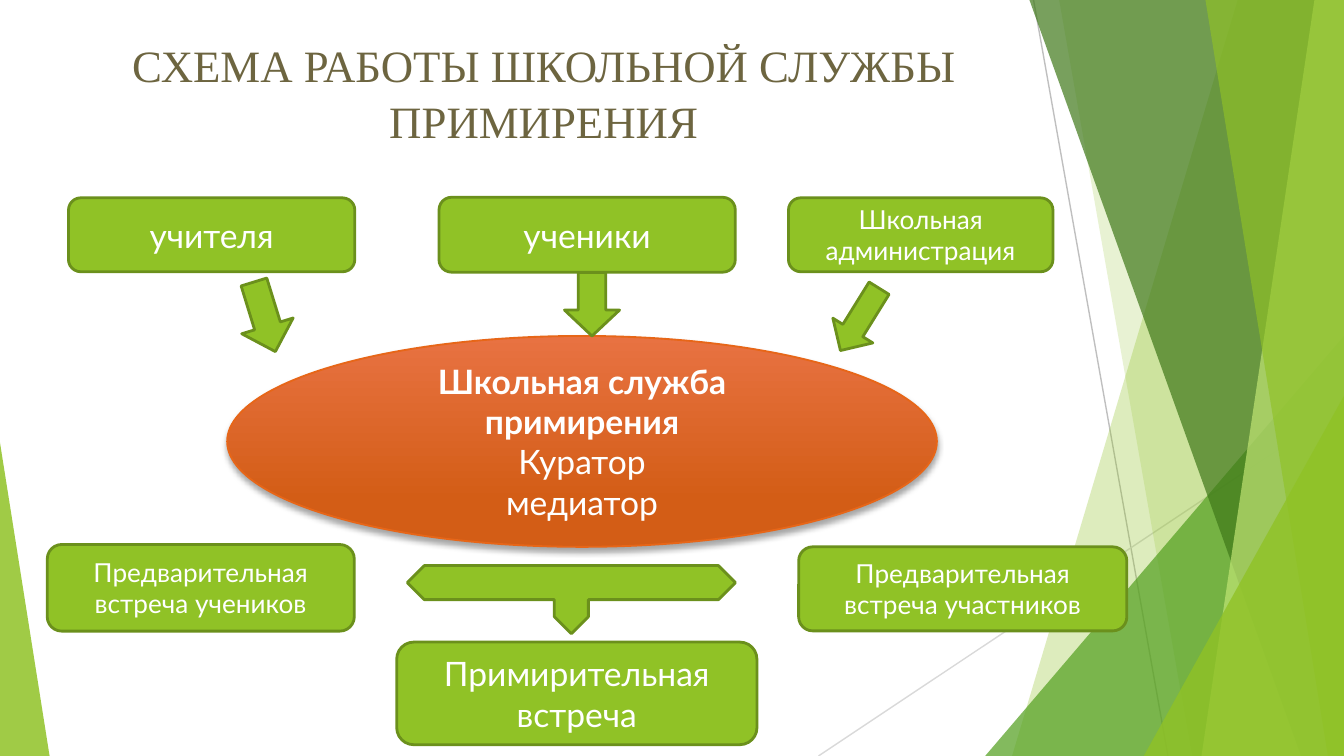
from lxml.etree import SubElement
from pptx import Presentation
from pptx.dml.color import RGBColor
from pptx.enum.shapes import MSO_CONNECTOR, MSO_SHAPE
from pptx.enum.text import MSO_ANCHOR, PP_ALIGN
from pptx.oxml.ns import qn
from pptx.util import Pt

WIDE, HIGH = 720, 405
HUES = {
    "white": "FFFFFF", "title": "6D6540", "green": "90C226", "edge": "6B901C",
    "leaf": "54A021", "dark": "3F7819", "light": "C0E474",
    "gray": "BFBFBF", "pale": "D9D9D9",
    "top": "E87242", "base": "D35D16", "rim": "E76618", "black": "000000",
}


def hue(name):
    return RGBColor.from_string(HUES[name])


def tint(shape, name, alpha):
    shape.shadow.inherit = False
    shape.fill.solid()
    shape.fill.fore_color.rgb = hue(name)
    shape.line.fill.background()
    color = shape.fill._xPr.find(qn("a:solidFill"))[0]
    SubElement(color, qn("a:alpha"), val=str(alpha * 1000))


def add_line(slide, ends, name):
    line = slide.shapes.add_connector(MSO_CONNECTOR.STRAIGHT, *map(Pt, ends))
    line.line.color.rgb = hue(name)
    line.line.width = Pt(0.75)
    SubElement(line._element.spPr, qn("a:effectLst"))


def add_band(slide, top, foot, name, alpha):
    form = slide.shapes.build_freeform(Pt(top), 0)
    corners = [(WIDE, 0), (WIDE, HIGH), (foot, HIGH)]
    form.add_line_segments([(Pt(x), Pt(y)) for x, y in corners], close=True)
    tint(form.convert_to_shape(), name, alpha)


def add_wedge(slide, box, tip, name, alpha):
    shape = slide.shapes.add_shape(MSO_SHAPE.ISOSCELES_TRIANGLE, *map(Pt, box))
    shape.adjustments[0] = tip
    tint(shape, name, alpha)


def write(shape, text, size, font="Lato", color="white"):
    frame = shape.text_frame
    frame.word_wrap = True
    frame.vertical_anchor = MSO_ANCHOR.MIDDLE
    frame.text = text
    for para in frame.paragraphs:
        para.alignment = PP_ALIGN.CENTER
        for run in para.runs:
            run.font.size = Pt(size)
            run.font.name = font
            run.font.color.rgb = hue(color)


def add_green(slide, kind, box, turn=0, adjust=()):
    shape = slide.shapes.add_shape(kind, *map(Pt, box))
    shape.shadow.inherit = False
    shape.fill.solid()
    shape.fill.fore_color.rgb = hue("green")
    shape.line.color.rgb = hue("edge")
    shape.line.width = Pt(1.5)
    shape.rotation = turn
    for spot, value in enumerate(adjust):
        shape.adjustments[spot] = value
    return shape


def add_title(slide):
    box = slide.shapes.add_textbox(*map(Pt, (1.4, 15, 579.6, 79.2)))
    write(box, "СХЕМА РАБОТЫ ШКОЛЬНОЙ СЛУЖБЫ ПРИМИРЕНИЯ", 24,
          "Times New Roman", "title")
    box.text_frame.vertical_anchor = MSO_ANCHOR.TOP
    box.text_frame.paragraphs[0].line_spacing = 1.05


def add_core(slide):
    core = slide.shapes.add_shape(MSO_SHAPE.OVAL, *map(Pt, (121.7, 180, 380.2, 113)))
    core.fill.gradient()
    core.fill.gradient_angle = 270
    stops = core.fill.gradient_stops
    for stop, name, place in zip(stops, ("top", "base"), (0, 0.78)):
        stop.color.rgb = hue(name)
        stop.position = place
    core.line.color.rgb = hue("rim")
    core.line.width = Pt(1)
    core.shadow.inherit = False
    glow = core._element.spPr.find(qn("a:effectLst"))
    shade = SubElement(glow, qn("a:outerShdw"), blurRad=str(Pt(3)),
                       dist=str(Pt(2)), dir="5400000", rotWithShape="0")
    color = SubElement(shade, qn("a:srgbClr"), val=HUES["black"])
    SubElement(color, qn("a:alpha"), val="35000")
    write(core, "Школьная служба примирения\nКуратор\nмедиатор", 18)
    core.text_frame.paragraphs[0].runs[0].font.bold = True


def add_decor(slide):
    add_line(slide, (553.7, 0, 625.7, HIGH), "gray")
    add_line(slide, (WIDE, 217.4, 438.5, HIGH), "pale")
    add_band(slide, 663.1, 542.2, "green", 30)
    add_band(slide, 567.4, 638.6, "green", 20)
    add_wedge(slide, (527.8, 180, 192.2, 225), 1, "leaf", 72)
    add_band(slide, 551.5, 697, "dark", 70)
    add_band(slide, 704.2, 643.7, "light", 70)
    add_band(slide, 645.8, 711.4, "green", 65)
    add_wedge(slide, (612.7, 212, 107.3, 193), 1, "green", 80)
    add_wedge(slide, (0, 237, 26.6, 168), 0, "green", 85)


def main():
    deck = Presentation()
    deck.slide_width, deck.slide_height = Pt(WIDE), Pt(HIGH)
    slide = deck.slides.add_slide(deck.slide_layouts[6])
    add_decor(slide)
    add_title(slide)
    add_core(slide)
    cards = [
        ("учителя", 18, (36.7, 106, 153.4, 39.6)),
        ("ученики", 18, (235.2, 105.7, 158.7, 40.1)),
        ("Школьная администрация", 14, (422.4, 106, 141.7, 39.6)),
        ("Предварительная встреча учеников", 14, (25.3, 291.7, 164.5, 46.4)),
        ("Предварительная встреча участников", 14, (427.9, 293, 175.8, 45)),
        ("Примирительная встреча", 18, (212.5, 344, 193, 55)),
    ]
    for text, size, box in cards:
        write(add_green(slide, MSO_SHAPE.ROUNDED_RECTANGLE, box), text, size)
    arrows = [
        ((127.4, 150.2, 28.8, 39), 342.9, ()),
        ((448, 151.5, 25.2, 39.3), 31.8, ()),
        ((302.4, 146, 29.5, 34), 0, (0.5, 0.47)),
    ]
    for box, turn, adjust in arrows:
        add_green(slide, MSO_SHAPE.DOWN_ARROW, box, turn, adjust)
    add_green(slide, MSO_SHAPE.LEFT_RIGHT_UP_ARROW, (218.2, 303, 175.8, 36.5),
              180, (0.5, 0.25, 0.25))
    deck.save("out.pptx")


if __name__ == "__main__":
    main()
